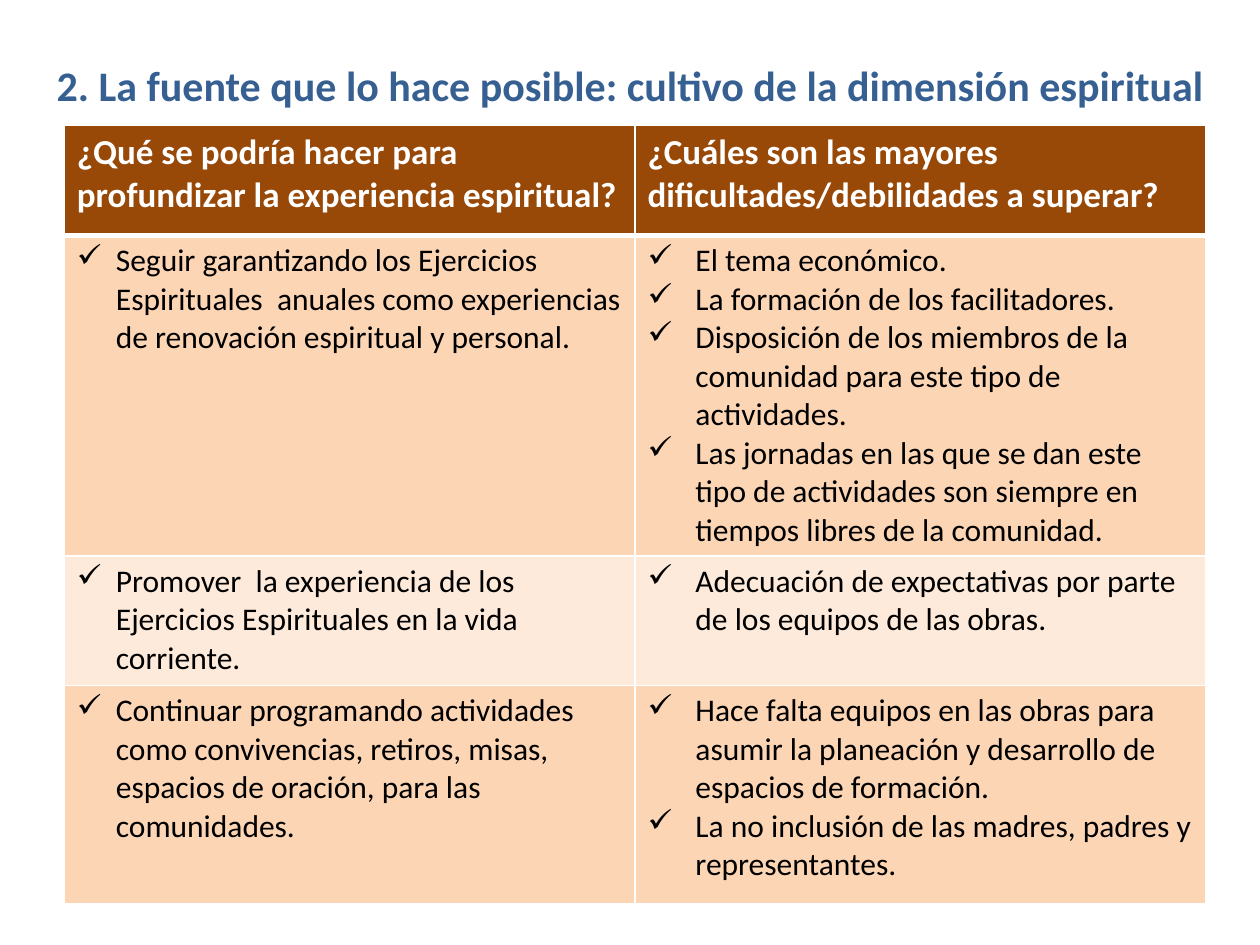
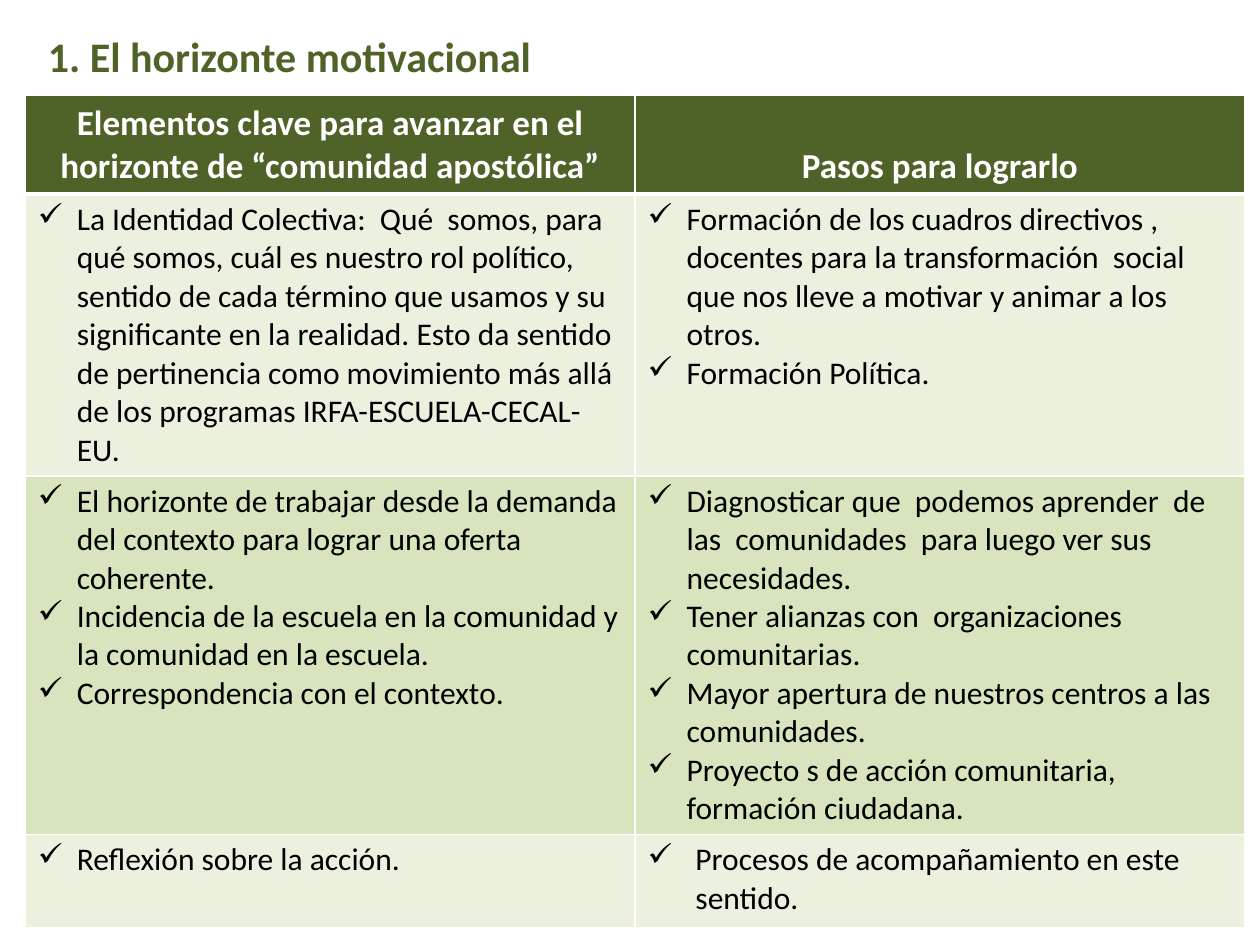
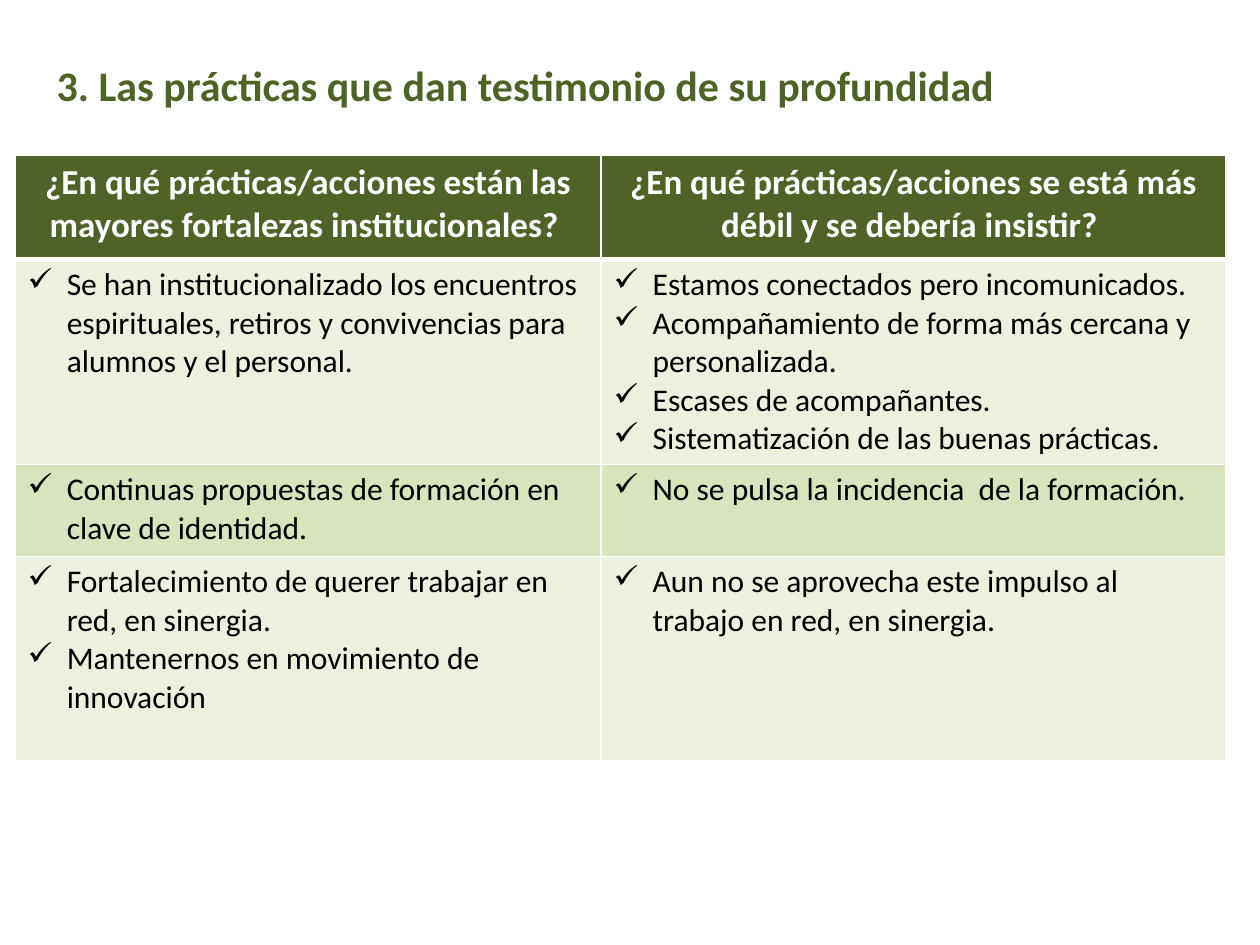
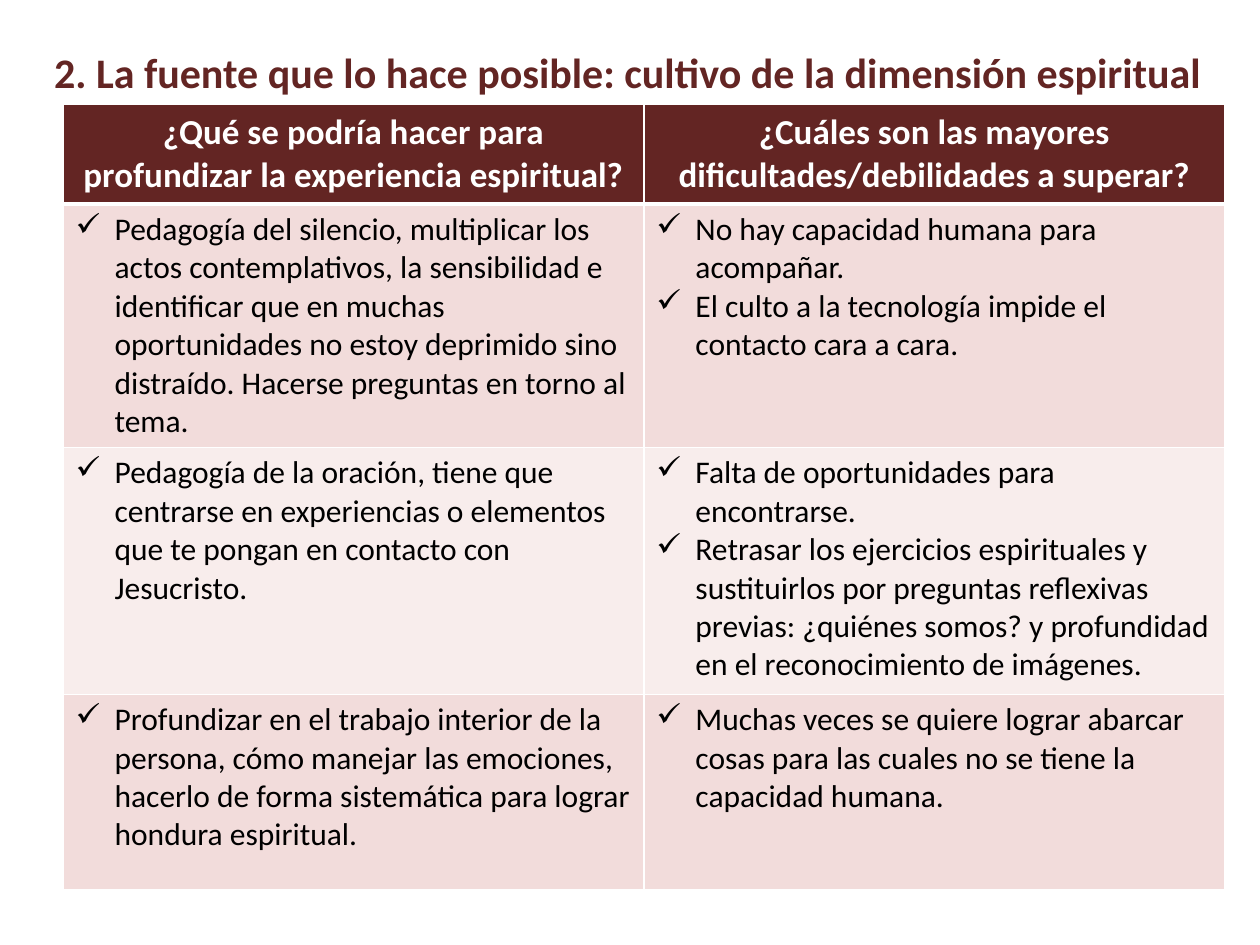
from dataclasses import dataclass
from lxml.etree import SubElement
from pptx import Presentation
from pptx.dml.color import RGBColor
from pptx.enum.text import MSO_ANCHOR, MSO_AUTO_SIZE, PP_ALIGN
from pptx.oxml.ns import qn
from pptx.util import Inches, Pt


# Theme: colours, type and line sizes shared by every slide
@dataclass(frozen=True)
class Theme:
    font: str = "Calibri"
    title_size: int = 24
    header_size: int = 20
    body_size: int = 18
    white: str = "FFFFFF"
    black: str = "000000"
    blue: str = "376092"
    # Each palette: header fill, odd body rows, even body rows
    orange: tuple = ("984807", "FCD5B5", "FDEADA")
    green: tuple = ("4F6228", "EBF1DE", "D7E4BD")
    red: tuple = ("632523", "F2DCDB", "F8EDEC")
    thin_line: int = 1
    thick_line: int = 3
    indent: float = 0.31
    wide_indent: float = 0.38


THEME = Theme()
SLIDE_WIDTH, SLIDE_HEIGHT = 10, 7.5
TITLE_WIDTH, TITLE_HEIGHT = 9.52, 0.63
SOURCE_TITLE = "2. La fuente que lo hace posible: cultivo de la dimensión espiritual"
SOURCE_HEADERS = [
    ["¿Qué se podría hacer para profundizar la experiencia espiritual?"],
    ["¿Cuáles son las mayores dificultades/debilidades a superar?"],
]

# Pages: each table row holds two cells, each cell a list of paragraphs
pages = [
    {
        "title": SOURCE_TITLE,
        "title_color": THEME.blue,
        "title_at": (0.35, 0.36),
        "palette": THEME.orange,
        "header_align": PP_ALIGN.LEFT,
        "table_at": (0.51, 0.99),
        "columns": (4.53, 4.53),
        "rows": (0.88, 1.73, 1.03, 1.73),
        "wide_cells": {(1, 1), (2, 1), (3, 1)},
        "cells": [
            SOURCE_HEADERS,
            [
                ["Seguir garantizando los Ejercicios Espirituales  anuales como "
                 "experiencias de renovación espiritual y personal."],
                ["El tema económico.",
                 "La formación de los facilitadores.",
                 "Disposición de los miembros de la comunidad para este tipo de actividades.",
                 "Las jornadas en las que se dan este tipo de actividades son siempre "
                 "en tiempos libres de la comunidad."],
            ],
            [
                ["Promover  la experiencia de los Ejercicios Espirituales en la vida corriente."],
                ["Adecuación de expectativas por parte de los equipos de las obras."],
            ],
            [
                ["Continuar programando actividades como convivencias, retiros, misas, "
                 "espacios de oración, para las comunidades."],
                ["Hace falta equipos en las obras para asumir la planeación y desarrollo "
                 "de espacios de formación.",
                 "La no inclusión de las madres, padres y representantes."],
            ],
        ],
    },
    {
        "title": "1. El horizonte motivacional",
        "title_color": THEME.green[0],
        "title_at": (0.28, 0.13),
        "palette": THEME.green,
        "header_align": PP_ALIGN.CENTER,
        "table_at": (0.2, 0.76),
        "columns": (4.84, 4.84),
        "rows": (0.68, 1.7, 2.23, 0.74),
        "wide_cells": {(3, 1)},
        "double_spaced": (0, 1),
        "cells": [
            [
                ["Elementos clave para avanzar en el horizonte de “comunidad apostólica”"],
                ["Pasos para lograrlo"],
            ],
            [
                ["La Identidad Colectiva:  Qué  somos, para qué somos, cuál es nuestro rol "
                 "político, sentido de cada término que usamos y su significante en la "
                 "realidad. Esto da sentido de pertinencia como movimiento más allá de los "
                 "programas IRFA-ESCUELA-CECAL-EU."],
                ["Formación de los cuadros directivos , docentes para la transformación  "
                 "social que nos lleve a motivar y animar a los otros.",
                 "Formación Política."],
            ],
            [
                ["El horizonte de trabajar desde la demanda del contexto para lograr una "
                 "oferta coherente.",
                 "Incidencia de la escuela en la comunidad y la comunidad en la escuela.",
                 "Correspondencia con el contexto."],
                ["Diagnosticar que  podemos aprender  de las  comunidades  para luego ver "
                 "sus necesidades.",
                 "Tener alianzas con  organizaciones  comunitarias.",
                 "Mayor apertura de nuestros centros a las comunidades.",
                 "Proyecto s de acción comunitaria, formación ciudadana."],
            ],
            [
                ["Reflexión sobre la acción."],
                ["Procesos de acompañamiento en este sentido."],
            ],
        ],
    },
    {
        "title": "3. Las prácticas que dan testimonio de su profundidad",
        "title_color": THEME.green[0],
        "title_at": (0.35, 0.36),
        "palette": THEME.green,
        "header_align": PP_ALIGN.CENTER,
        "table_at": (0.12, 1.23),
        "columns": (4.65, 4.96),
        "rows": (0.83, 1.62, 0.73, 1.62),
        "cells": [
            [
                ["¿En qué prácticas/acciones están las mayores fortalezas institucionales? "],
                ["¿En qué prácticas/acciones se está más débil y se debería insistir? "],
            ],
            [
                ["Se han institucionalizado los encuentros espirituales, retiros y "
                 "convivencias para alumnos y el personal."],
                ["Estamos conectados pero incomunicados.",
                 "Acompañamiento de forma más cercana y personalizada.",
                 "Escases de acompañantes.",
                 "Sistematización de las buenas prácticas."],
            ],
            [
                ["Continuas propuestas de formación en clave de identidad."],
                ["No se pulsa la incidencia  de la formación."],
            ],
            [
                ["Fortalecimiento de querer trabajar en red, en sinergia.",
                 "Mantenernos en movimiento de innovación"],
                ["Aun no se aprovecha este impulso al trabajo en red, en sinergia."],
            ],
        ],
    },
    {
        "title": SOURCE_TITLE,
        "title_color": THEME.red[0],
        "title_at": (0.33, 0.25),
        "palette": THEME.red,
        "header_align": PP_ALIGN.CENTER,
        "table_at": (0.5, 0.83),
        "columns": (4.61, 4.61),
        "rows": (0.79, 1.84, 1.96, 1.55),
        "cells": [
            SOURCE_HEADERS,
            [
                ["Pedagogía del silencio, multiplicar los actos contemplativos, la "
                 "sensibilidad e identificar que en muchas oportunidades no estoy deprimido "
                 "sino distraído. Hacerse preguntas en torno al tema."],
                ["No hay capacidad humana para acompañar.",
                 "El culto a la tecnología impide el contacto cara a cara."],
            ],
            [
                ["Pedagogía de la oración, tiene que centrarse en experiencias o elementos "
                 "que te pongan en contacto con Jesucristo."],
                ["Falta de oportunidades para encontrarse.",
                 "Retrasar los ejercicios espirituales y sustituirlos por preguntas "
                 "reflexivas previas: ¿quiénes somos? y profundidad en el reconocimiento "
                 "de imágenes."],
            ],
            [
                ["Profundizar en el trabajo interior de la persona, cómo manejar las "
                 "emociones, hacerlo de forma sistemática para lograr hondura espiritual."],
                ["Muchas veces se quiere lograr abarcar cosas para las cuales no se tiene "
                 "la capacidad humana."],
            ],
        ],
    },
]


def format_runs(para, size, color, bold):
    for span in para.runs:
        span.font.name = THEME.font
        span.font.size = Pt(size)
        span.font.bold = bold
        span.font.color.rgb = RGBColor.from_string(color)


def draw_borders(cell, row):
    """White cell borders, thick between the header and the first body row."""
    thick_side = {0: "lnB", 1: "lnT"}.get(row)
    properties = cell._tc.get_or_add_tcPr()
    for side in ("lnL", "lnR", "lnT", "lnB"):
        width = THEME.thick_line if side == thick_side else THEME.thin_line
        line = SubElement(properties, qn(f"a:{side}"), w=str(Pt(width)))
        fill = SubElement(line, qn("a:solidFill"))
        SubElement(fill, qn("a:srgbClr"), val=THEME.white)


deck = Presentation()
deck.slide_width, deck.slide_height = Inches(SLIDE_WIDTH), Inches(SLIDE_HEIGHT)
title_only = deck.slide_layouts.get_by_name("Title Only")

for page in pages:
    slide = deck.slides.add_slide(title_only)

    # Title
    title = slide.shapes.title
    title.left, title.top = map(Inches, page["title_at"])
    title.width, title.height = Inches(TITLE_WIDTH), Inches(TITLE_HEIGHT)
    title.text_frame.text = page["title"]
    title.text_frame.auto_size = MSO_AUTO_SIZE.NONE
    title.text_frame.vertical_anchor = MSO_ANCHOR.MIDDLE
    title.text_frame.paragraphs[0].alignment = PP_ALIGN.LEFT
    format_runs(title.text_frame.paragraphs[0], THEME.title_size, page["title_color"], True)

    # Table grid
    columns, rows = page["columns"], page["rows"]
    left, top = page["table_at"]
    table = slide.shapes.add_table(
        len(rows), len(columns), Inches(left), Inches(top),
        Inches(sum(columns)), Inches(sum(rows))).table
    for column, width in zip(table.columns, columns):
        column.width = Inches(width)
    for table_row, height in zip(table.rows, rows):
        table_row.height = Inches(height)

    # Table cells
    header_fill, *band_fills = page["palette"]
    for row, row_cells in enumerate(page["cells"]):
        is_header = row == 0
        for column, lines in enumerate(row_cells):
            cell = table.cell(row, column)
            draw_borders(cell, row)
            cell.fill.solid()
            cell.fill.fore_color.rgb = RGBColor.from_string(
                header_fill if is_header else band_fills[(row - 1) % 2])
            cell.text_frame.text = "\n".join(lines)
            is_wide = (row, column) in page.get("wide_cells", ())
            indent = Inches(THEME.wide_indent if is_wide else THEME.indent)
            for para in cell.text_frame.paragraphs:
                if is_header:
                    para.alignment = page["header_align"]
                    if page.get("double_spaced") == (row, column):
                        para.line_spacing = 2.0
                    format_runs(para, THEME.header_size, THEME.white, True)
                else:
                    properties = para._p.get_or_add_pPr()
                    properties.set("marL", str(indent))
                    properties.set("indent", str(-indent))
                    SubElement(properties, qn("a:buChar"), char="✓")
                    format_runs(para, THEME.body_size, THEME.black, False)

deck.save("out.pptx")
